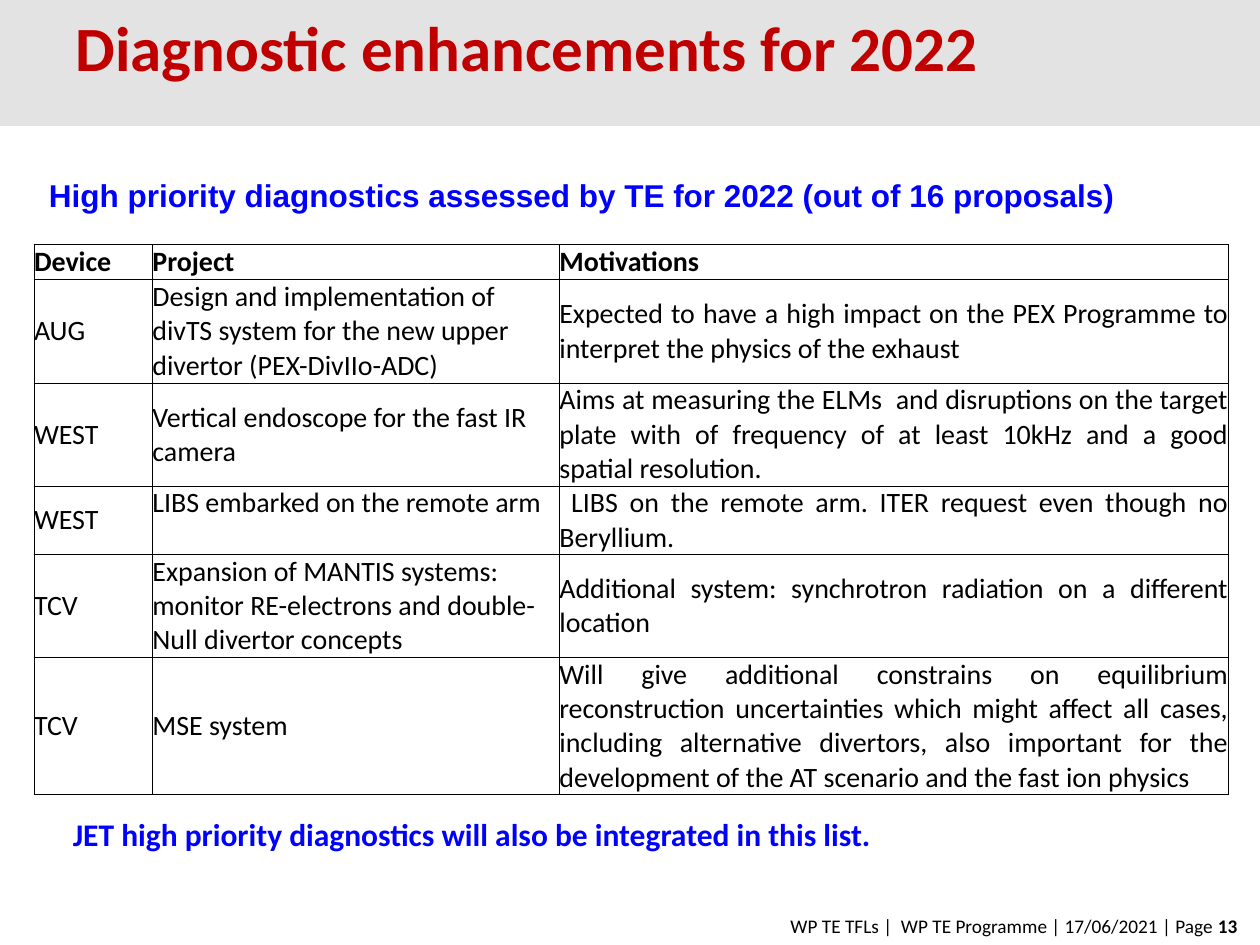
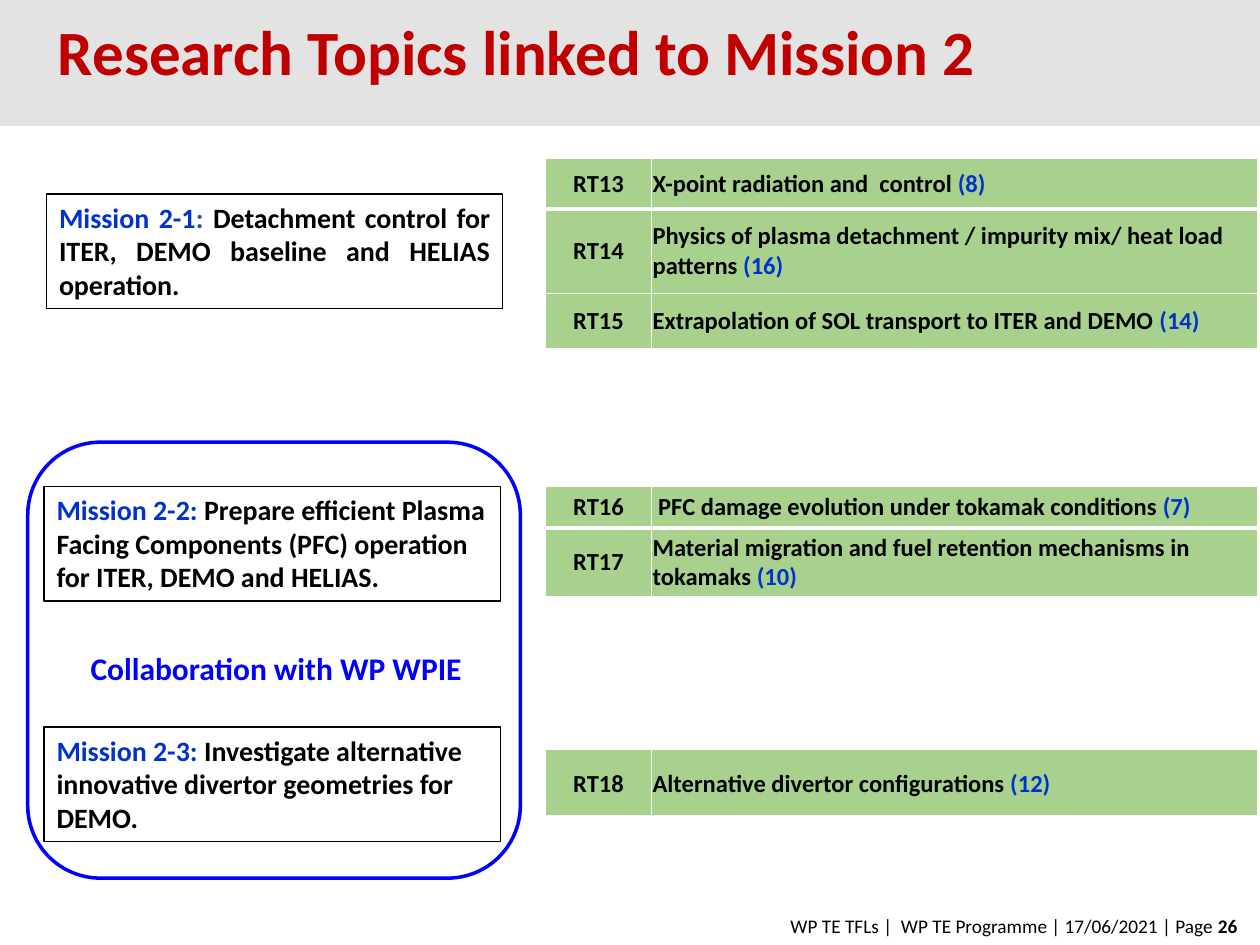
from dataclasses import dataclass
from typing import NamedTuple

from lxml import etree
from pptx import Presentation
from pptx.dml.color import RGBColor
from pptx.enum.shapes import MSO_SHAPE
from pptx.enum.text import MSO_ANCHOR, MSO_AUTO_SIZE, PP_ALIGN
from pptx.oxml.ns import qn
from pptx.util import Inches, Pt

LEFT, RIGHT = PP_ALIGN.LEFT, PP_ALIGN.RIGHT
CENTER, JUSTIFY = PP_ALIGN.CENTER, PP_ALIGN.JUSTIFY
TOP, MIDDLE = MSO_ANCHOR.TOP, MSO_ANCHOR.MIDDLE
RECT, ROUND = MSO_SHAPE.RECTANGLE, MSO_SHAPE.ROUNDED_RECTANGLE
FIXED = MSO_AUTO_SIZE.NONE

COLORS = {
    "black": "000000",
    "white": "FFFFFF",
    "band": "E3E3E3",
    "title": "C00000",
    "note": "0000FF",
    "key": "0033CC",
    "colon": "2F5496",
    "topic": "A9D18E",
}
FOOTER = "WP TE TFLs |  WP TE Programme | 17/06/2021 | Page "


class Run(NamedTuple):
    text: str
    color: str = "black"
    bold: bool = True


class Box(NamedTuple):
    left: float
    top: float
    width: float
    height: float


@dataclass
class Style:
    size: float
    align: PP_ALIGN = LEFT
    font: str = "Calibri"
    after: float = 0


class Mission(NamedTuple):
    box: Box
    runs: list[Run]
    align: PP_ALIGN = LEFT


class Topic(NamedTuple):
    code: str
    name: str
    count: str
    height: float


class Group(NamedTuple):
    top: float
    topics: list[Topic]


class Device(NamedTuple):
    name: str
    project: str
    motive: str
    height: float


HEAD = Device("Device", "Project", "Motivations", 0.28)
DEVICES = [
    Device("AUG",
           "Design and implementation of divTS system for the new upper divertor (PEX-DivIIo-ADC)",
           "Expected to have a high impact on the PEX Programme to interpret the physics of the exhaust",
           0.82),
    Device("WEST",
           "Vertical endoscope for the fast IR camera",
           "Aims at measuring the ELMs  and disruptions on the target plate with of frequency "
           "of at least 10kHz and a good spatial resolution.",
           0.82),
    Device("WEST",
           "LIBS embarked on the remote arm",
           " LIBS on the remote arm. ITER request even though no Beryllium.",
           0.54),
    Device("TCV",
           "Expansion of MANTIS systems: monitor RE-electrons and double-Null divertor concepts",
           "Additional system: synchrotron radiation on a different location",
           0.82),
    Device("TCV",
           "MSE system",
           "Will give additional constrains on equilibrium reconstruction uncertainties which "
           "might affect all cases, including alternative divertors, also important for the "
           "development of the AT scenario and the fast ion physics",
           1.09),
]
MISSIONS = [
    Mission(Box(0.37, 1.54, 3.62, 0.91), [
        Run("Mission 2-1", "key"), Run(": ", "colon"),
        Run("Detachment control for ITER, DEMO baseline and HELIAS operation.")], JUSTIFY),
    Mission(Box(0.35, 3.86, 3.62, 0.91), [
        Run("Mission 2-2: ", "key"),
        Run("Prepare efficient Plasma Facing Components (PFC) operation for ITER, DEMO and HELIAS.")]),
    Mission(Box(0.35, 5.77, 3.62, 0.91), [
        Run("Mission 2-3: ", "key"),
        Run("Investigate alternative innovative divertor geometries for DEMO.")]),
]
GROUPS = [
    Group(1.26, [
        Topic("RT13", "X-point radiation and  control ", "(8)", 0.4),
        Topic("RT14", "Physics of plasma detachment / impurity mix/ heat load patterns ", "(16)", 0.67),
        Topic("RT15", "Extrapolation of SOL transport to ITER and DEMO ", "(14)", 0.44)]),
    Group(3.86, [
        Topic("RT16", " PFC damage evolution under tokamak conditions ", "(7)", 0.33),
        Topic("RT17", "Material migration and fuel retention mechanisms in tokamaks ", "(10)", 0.55)]),
    Group(5.95, [
        Topic("RT18", "Alternative divertor configurations ", "(12)", 0.54)]),
]


def tint(name: str) -> RGBColor:
    return RGBColor.from_string(COLORS[name])


def place(box: Box) -> list[int]:
    return [Inches(side) for side in box]


def assign(target, values: dict) -> None:
    for name, value in values.items():
        setattr(target, name, value)


def write(frame, runs: list[Run], style: Style) -> None:
    para = frame.paragraphs[0]
    assign(para, {"alignment": style.align, "space_before": Pt(0),
                  "space_after": Pt(style.after)})
    for part in runs:
        run = para.add_run()
        run.text = part.text
        assign(run.font, {"name": style.font, "size": Pt(style.size), "bold": part.bold})
        run.font.color.rgb = tint(part.color)


def add_text(slide, box: Box, runs: list[Run], style: Style, wrap: bool = True) -> None:
    frame = slide.shapes.add_textbox(*place(box)).text_frame
    frame.word_wrap = wrap
    write(frame, runs, style)


def add_frame(slide, kind, box: Box, line: str, width: float):
    """Add an outlined shape without fill."""
    shape = slide.shapes.add_shape(kind, *place(box))
    shape.shadow.inherit = False
    shape.fill.background()
    shape.line.color.rgb = tint(line)
    shape.line.width = Pt(width)
    return shape


def add_band(slide) -> None:
    """Draw the title band and move it to the layout, behind all else."""
    band = slide.shapes.add_shape(RECT, *place(Box(0, 0, 10, 1)))
    band.shadow.inherit = False
    band.fill.solid()
    band.fill.fore_color.rgb = tint("band")
    band.line.fill.background()
    slide.slide_layout.shapes.element.insert(2, band.element)


def add_slide(deck, title: str, left: float, top: float, page: int):
    slide = deck.slides.add_slide(deck.slide_layouts[5])
    head = slide.shapes.title
    sides = place(Box(left, top, 8.25, 1))
    assign(head, dict(zip(("left", "top", "width", "height"), sides)))
    assign(head.text_frame, {"word_wrap": True, "auto_size": FIXED,
                             "vertical_anchor": MIDDLE})
    write(head.text_frame, [Run(title, "title")], Style(36))
    head.text_frame.paragraphs[0].line_spacing = Pt(24)
    add_text(slide, Box(0.91, 7.21, 9.01, 0.29),
             [Run(FOOTER, bold=False), Run(str(page))], Style(11, RIGHT))
    return slide


def add_grid(slide, left: float, top: float, cols: list[float], rows: list[float]):
    box = Box(left, top, sum(cols), sum(rows))
    table = slide.shapes.add_table(len(rows), len(cols), *place(box)).table
    assign(table, {"first_row": False, "horz_banding": False})
    for col, width in zip(table.columns, cols):
        col.width = Inches(width)
    for row, height in zip(table.rows, rows):
        row.height = Inches(height)
    return table


def set_edges(cell, color: str, widths: dict[str, float]) -> None:
    """Set cell borders; call before the fill, which must follow them."""
    props = cell._tc.get_or_add_tcPr()
    for side in "LRTB":
        line = etree.SubElement(props, qn(f"a:ln{side}"), w=str(Pt(widths[side])))
        fill = etree.SubElement(line, qn("a:solidFill"))
        etree.SubElement(fill, qn("a:srgbClr"), val=COLORS[color])


def set_cell(cell, runs: list[Run], style: Style, inset: float) -> None:
    assign(cell, {"vertical_anchor": MIDDLE, "margin_top": 0, "margin_bottom": 0,
                  "margin_left": Inches(inset), "margin_right": Inches(inset)})
    write(cell.text_frame, runs, style)


def add_devices(slide) -> None:
    rows = [HEAD, *DEVICES]
    table = add_grid(slide, 0.27, 1.94, [0.94, 3.23, 5.31], [row.height for row in rows])
    for r, row in enumerate(rows):
        for c, text in enumerate((row.name, row.project, row.motive)):
            cell = table.cell(r, c)
            align = JUSTIFY if r and c == 2 else LEFT
            set_edges(cell, "black", dict.fromkeys("LRTB", 0.5))
            cell.fill.background()
            set_cell(cell, [Run(text, bold=row is HEAD)], Style(16, align), 0)
    table.cell(3, 1).vertical_anchor = TOP


def add_topics(slide, group: Group) -> None:
    table = add_grid(slide, 4.33, group.top, [0.84, 4.81],
                     [topic.height for topic in group.topics])
    for r, topic in enumerate(group.topics):
        edges = {"L": 1, "R": 1, "T": 3 if r == 1 else 1, "B": 3 if r == 0 else 1}
        code, name = table.cell(r, 0), table.cell(r, 1)
        for cell in (code, name):
            set_edges(cell, "white", edges)
            cell.fill.solid()
            cell.fill.fore_color.rgb = tint("topic")
        set_cell(code, [Run(topic.code)], Style(14, CENTER), 0.1)
        set_cell(name, [Run(topic.name), Run(topic.count, "key")], Style(14), 0.01)


def add_mission(slide, mission: Mission) -> None:
    frame = add_frame(slide, RECT, mission.box, "black", 0.75).text_frame
    assign(frame, {"word_wrap": True, "vertical_anchor": TOP})
    write(frame, mission.runs, Style(16, mission.align, after=4))


def main() -> None:
    deck = Presentation()
    assign(deck, {"slide_width": Inches(10), "slide_height": Inches(7.5)})

    slide = add_slide(deck, "Diagnostic enhancements for 2022", 0.5, 0, 13)
    add_band(slide)
    add_devices(slide)
    add_text(slide, Box(0.29, 1.35, 9.21, 0.4),
             [Run("High priority diagnostics assessed by TE for 2022 (out of 16 proposals)", "note")],
             Style(18, font="Arial"))
    add_text(slide, Box(0.48, 6.42, 8.83, 0.4),
             [Run("JET high priority diagnostics will also be integrated in this list.", "note")],
             Style(18))

    slide = add_slide(deck, "Research Topics linked to Mission 2", 0.36, 0.03, 26)
    for mission in MISSIONS:
        add_mission(slide, mission)
    for group in GROUPS:
        add_topics(slide, group)
    add_frame(slide, ROUND, Box(0.22, 3.51, 3.91, 3.46), "note", 2)
    add_text(slide, Box(0.62, 5.1, 3.18, 0.4),
             [Run("Collaboration with WP WPIE", "note")], Style(18), wrap=False)

    deck.save("out.pptx")


if __name__ == "__main__":
    main()
